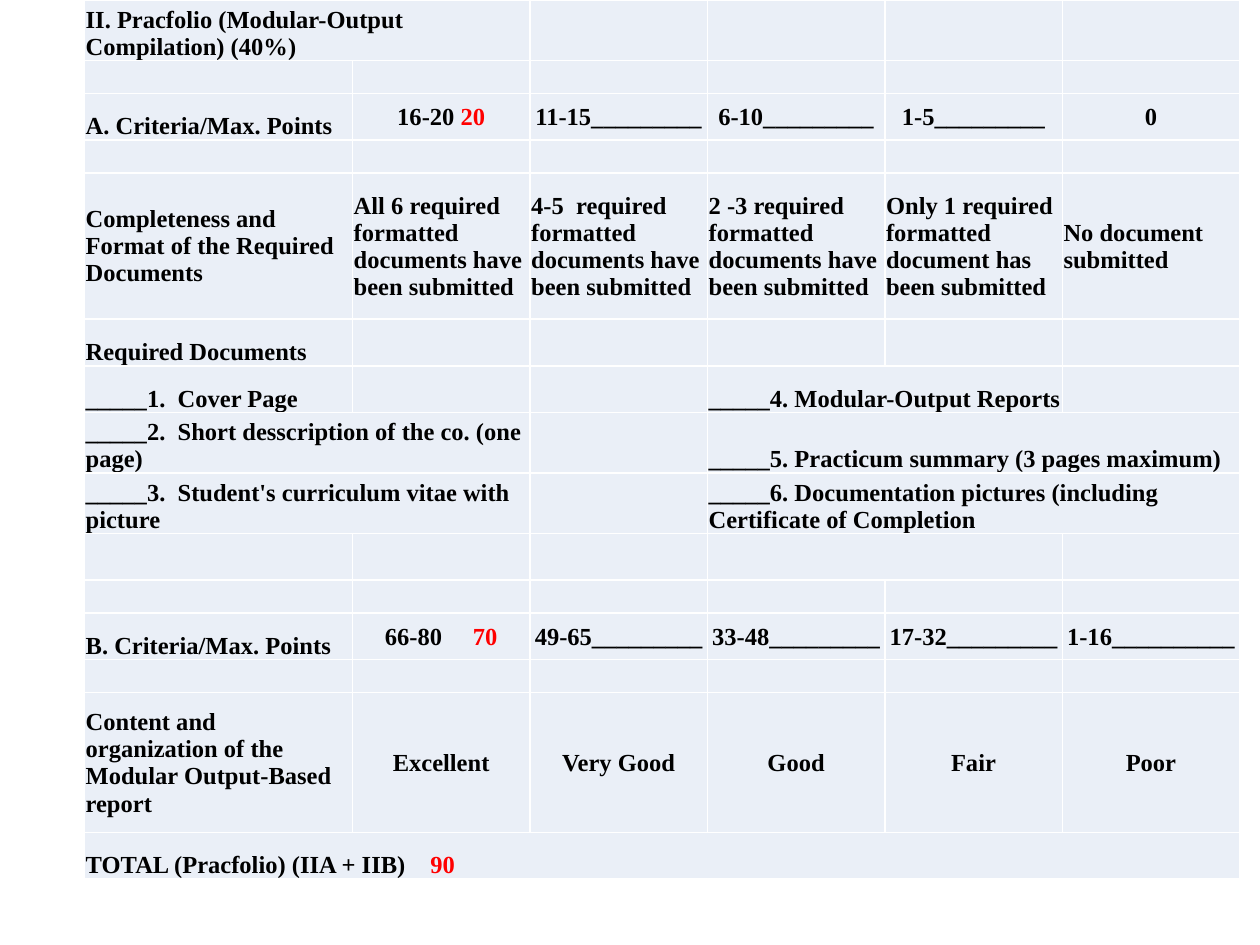
from dataclasses import dataclass

from lxml import etree
from pptx import Presentation
from pptx.dml.color import RGBColor
from pptx.enum.text import MSO_ANCHOR, PP_ALIGN
from pptx.oxml.ns import qn
from pptx.util import Inches, Pt

LEFT, CENTER = PP_ALIGN.LEFT, PP_ALIGN.CENTER
BOTTOM, MIDDLE = MSO_ANCHOR.BOTTOM, MSO_ANCHOR.MIDDLE


@dataclass(frozen=True)
class Theme:
    font: str = "Times New Roman"
    size: int = 14
    ink: str = "000000"
    score: str = "FF0000"
    fill: str = "EAEFF7"
    border: str = "FFFFFF"
    border_width: int = 1


THEME = Theme()


@dataclass(frozen=True)
class Scored:
    """A label followed by the points given, with extra space between in points."""
    label: str
    points: str
    gap: float = 0


# Row styles: (alignment, anchor) of the first column, then of the others
ITEM = ((LEFT, BOTTOM), (LEFT, BOTTOM))
CRITERIA = ((LEFT, BOTTOM), (CENTER, MIDDLE))
DESCRIPTION = ((LEFT, MIDDLE), (LEFT, MIDDLE))
GRADES = ((LEFT, MIDDLE), (CENTER, MIDDLE))

COLUMN_WIDTHS = [2.13] + [1.41] * 5
SPACER = (0.26, ITEM, {}, {})

# Each row: height, style, {column: content}, {first column: columns spanned}
RUBRIC = [
    (0.48, ITEM, {0: "II. Pracfolio (Modular-Output Compilation) (40%)"}, {0: 2}),
    SPACER,
    (0.37, CRITERIA, dict(enumerate([
        "A. Criteria/Max. Points", Scored("16-20", "20"), "11-15_________",
        "6-10_________", "1-5_________", "0"])), {}),
    SPACER,
    (1.16, DESCRIPTION, dict(enumerate([
        "Completeness and Format of the Required Documents",
        "All 6 required formatted documents have been submitted",
        "4-5  required formatted documents have been submitted",
        "2 -3 required formatted documents have been submitted",
        "Only 1 required formatted document has been submitted",
        "No document submitted"])), {}),
    (0.37, ITEM, {0: "Required Documents"}, {}),
    (0.37, ITEM, {0: "_____1.  Cover Page",
                  3: "_____4. Modular-Output Reports"}, {3: 2}),
    (0.48, ITEM, {0: "_____2.  Short desscription of the co. (one page)",
                  3: "_____5. Practicum summary (3 pages maximum)"}, {0: 2, 3: 3}),
    (0.48, ITEM, {0: "_____3.  Student's curriculum vitae with picture",
                  3: "_____6. Documentation pictures (including "
                     "Certificate of Completion"}, {0: 2, 3: 3}),
    (0.37, ITEM, {}, {3: 2}),
    SPACER,
    (0.37, CRITERIA, dict(enumerate([
        "B. Criteria/Max. Points", Scored("66-80", "70", 14), "49-65_________",
        "33-48_________", "17-32_________", "1-16__________"])), {}),
    SPACER,
    (1.11, GRADES, dict(enumerate([
        "Content and organization of the Modular Output-Based report",
        "Excellent", "Very Good", "Good", "Fair", "Poor"])), {}),
    (0.37, ITEM, {0: Scored("TOTAL (Pracfolio) (IIA + IIB)", "90", 10.5)}, {0: 6}),
]


def add_run(paragraph, text, color):
    run = paragraph.add_run()
    run.text = text
    font_format = {"name": THEME.font, "size": Pt(THEME.size), "bold": True}
    for attribute, value in font_format.items():
        setattr(run.font, attribute, value)
    run.font.color.rgb = RGBColor.from_string(color)
    return run


def write_content(paragraph, content):
    if isinstance(content, Scored):
        add_run(paragraph, content.label, THEME.ink)
        gap = add_run(paragraph, " ", THEME.ink)
        if content.gap:
            gap.font._element.set("spc", str(round(content.gap * 100)))
        add_run(paragraph, content.points, THEME.score)
    elif content:
        add_run(paragraph, content, THEME.ink)
    else:
        # An empty cell keeps the text size, so that its row stays low
        etree.SubElement(paragraph._p, qn("a:endParaRPr"), sz=str(THEME.size * 100))


def add_borders(cell):
    properties = cell._tc.get_or_add_tcPr()
    for position, side in enumerate(("a:lnL", "a:lnR", "a:lnT", "a:lnB")):
        line = etree.Element(qn(side), w=str(Pt(THEME.border_width)))
        solid = etree.SubElement(line, qn("a:solidFill"))
        etree.SubElement(solid, qn("a:srgbClr"), val=THEME.border)
        properties.insert(position, line)


def format_cell(cell, alignment, anchor):
    cell_format = {
        "margin_left": Inches(0.01), "margin_right": Inches(0.01),
        "margin_top": Inches(0.01), "margin_bottom": 0,
        "vertical_anchor": anchor,
    }
    for attribute, value in cell_format.items():
        setattr(cell, attribute, value)
    cell.fill.solid()
    cell.fill.fore_color.rgb = RGBColor.from_string(THEME.fill)
    add_borders(cell)
    cell.text_frame.paragraphs[0].alignment = alignment


def add_rubric(slide, left, top, width, height):
    """Fit the rubric's columns and rows to the given box."""
    table = slide.shapes.add_table(
        len(RUBRIC), len(COLUMN_WIDTHS), left, top, width, height).table
    table.first_row = table.horz_banding = False
    across = width / sum(COLUMN_WIDTHS)
    down = height / sum(row[0] for row in RUBRIC)
    for column, share in zip(table.columns, COLUMN_WIDTHS):
        column.width = round(share * across)

    for r, (share, (first, others), contents, spans) in enumerate(RUBRIC):
        table.rows[r].height = round(share * down)
        for c in range(len(COLUMN_WIDTHS)):
            cell = table.cell(r, c)
            format_cell(cell, *(others if c else first))
            write_content(cell.text_frame.paragraphs[0], contents.get(c))
        for c, count in spans.items():
            table.cell(r, c).merge(table.cell(r, c + count - 1))


def main():
    presentation = Presentation()
    presentation.slide_width = Inches(10)
    presentation.slide_height = Inches(7.5)
    slide = presentation.slides.add_slide(presentation.slide_layouts[6])
    add_rubric(slide, Inches(0.67), Inches(0), Inches(9.17), Inches(6.98))
    presentation.save("out.pptx")


if __name__ == "__main__":
    main()
